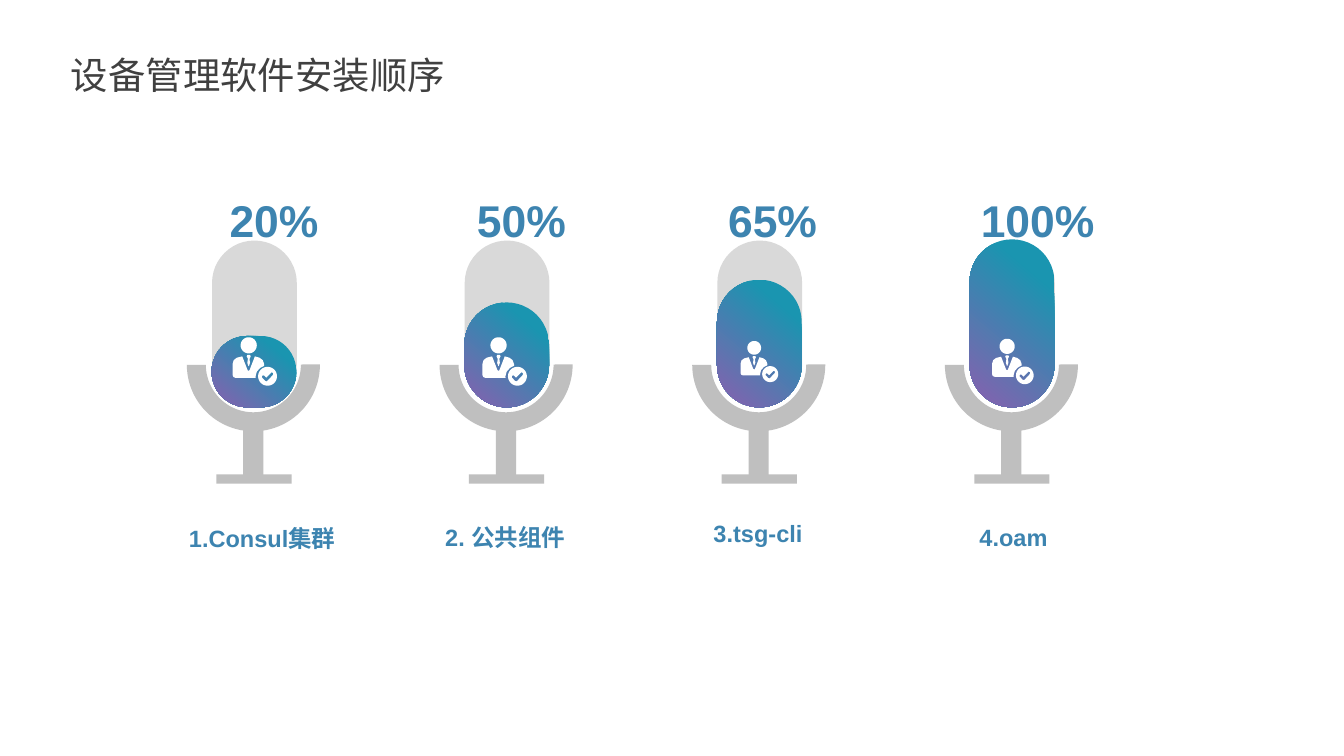
from dataclasses import dataclass
from math import cos, pi, sin

from pptx import Presentation
from pptx.dml.color import RGBColor
from pptx.enum.shapes import MSO_SHAPE
from pptx.enum.text import MSO_ANCHOR, MSO_AUTO_SIZE, PP_ALIGN
from pptx.util import Pt

RECTANGLE = MSO_SHAPE.RECTANGLE
ROUNDED = MSO_SHAPE.ROUNDED_RECTANGLE
ARC = MSO_SHAPE.BLOCK_ARC
CENTER = PP_ALIGN.CENTER
LEFT = PP_ALIGN.LEFT
MIDDLE = MSO_ANCHOR.MIDDLE
TOP = MSO_ANCHOR.TOP
NO_AUTOFIT = MSO_AUTO_SIZE.NONE


@dataclass(frozen=True)
class Theme:
    """Colours, font and type sizes of the slide."""
    title: RGBColor = RGBColor.from_string("404040")
    accent: RGBColor = RGBColor.from_string("3D84B0")
    stand: RGBColor = RGBColor.from_string("BFBFBF")
    capsule: RGBColor = RGBColor.from_string("D9D9D9")
    level_start: RGBColor = RGBColor.from_string("1A95B0")
    level_end: RGBColor = RGBColor.from_string("895FAF")
    icon: RGBColor = RGBColor.from_string("FFFFFF")
    font: str = "Arial"
    title_size: float = 20
    percent_size: float = 23.8
    label_size: float = 12.6


@dataclass(frozen=True)
class Step:
    """One installation step; offsets are relative to its microphone."""
    label: str
    percent: str
    level_height: float
    icon_center: float
    icon_width: float
    percent_offset: float
    label_offset: float
    label_drop: float


THEME = Theme()
STEPS = [
    Step("1.Consul集群", "20%", 38.2, 36.4, 23.8, 15.8, -22.3, 151.9),
    Step("2. 公共组件", "50%", 56.2, 34.9, 23.8, 13, -27.4, 151.2),
    Step("3.tsg-cli", "65%", 68.4, 36, 20.2, 12.2, -27.4, 149),
    Step("4.oam", "100%", 90, 36.4, 22.3, 12.2, -25.9, 151.2),
]
FIRST_LEFT, MICROPHONE_TOP, PITCH = 100.1, 128.9, 135.36
CAPSULE_HEIGHT = 89.3
ICON_WIDTH, ICON_HEIGHT, ICON_PRECISION = 33, 36, 100


def circle(x, y, radius, count=48):
    """Return the points of a circle."""
    return [(x + radius * cos(2 * pi * i / count), y + radius * sin(2 * pi * i / count))
            for i in range(count)]


ICON_OUTLINES = [
    [(29, 26), (25, 30), (23.6, 28.6), (22.6, 28.2), (21.8, 29), (22, 30),
     (24.3, 32.5), (25.3, 32.8), (26, 32.3), (30, 28), (30.2, 26.6)],
    circle(26, 29, 7),
    [(7.2, 14.2), (11.2, 24.5), (12, 25), (12.6, 24.5), (16.6, 14.2), (20, 15.2),
     (22.4, 17), (23.5, 20), (23.5, 21.2), (20.4, 22.8), (18, 25.6), (17.1, 29),
     (17.2, 30.2), (2.2, 30.2), (0.6, 29.5), (0, 28), (0, 20), (0.9, 17), (3.2, 15.2)],
    [(11, 13.2), (13, 13.2), (13.5, 14.2), (12.6, 16), (13, 19), (12.2, 21.4),
     (11.8, 21.4), (11, 19), (11.4, 16), (10.5, 14.2)],
    circle(12, 6, 6),
]


def set_text(shape, text, size, color, bold, alignment, anchor, insets):
    """Write one unwrapped line of text with the given format."""
    frame = shape.text_frame
    frame.auto_size = NO_AUTOFIT
    frame.word_wrap = False
    frame.vertical_anchor = anchor
    frame.margin_left = frame.margin_right = Pt(insets[0])
    frame.margin_top = frame.margin_bottom = Pt(insets[1])
    frame.text = text
    paragraph = frame.paragraphs[0]
    paragraph.alignment = alignment
    font = paragraph.font
    font.name, font.size, font.bold = THEME.font, Pt(size), bold
    font.color.rgb = color


def add_part(slide, kind, left, top, width, height, color):
    """Add a filled preset shape without line or shadow."""
    shape = slide.shapes.add_shape(kind, Pt(left), Pt(top), Pt(width), Pt(height))
    shape.shadow.inherit = False
    shape.line.fill.background()
    shape.fill.solid()
    shape.fill.fore_color.rgb = color
    return shape


def add_title(slide, text, left, top, width, height):
    """Place the slide title in its box."""
    title = slide.shapes.title
    title.left, title.top, title.width, title.height = map(Pt, (left, top, width, height))
    set_text(title, text, THEME.title_size, THEME.title, False, CENTER, MIDDLE, (0, 0))


def add_icon(slide, center_x, center_y, width):
    """Draw the person with a check badge around a centre point."""
    scale = Pt(width) / (ICON_WIDTH * ICON_PRECISION)
    outlines = [[(x * ICON_PRECISION, y * ICON_PRECISION) for x, y in outline]
                for outline in ICON_OUTLINES]
    builder = slide.shapes.build_freeform(*outlines[0][0], scale=scale)
    builder.add_line_segments(outlines[0][1:], close=True)
    for outline in outlines[1:]:
        builder.move_to(*outline[0])
        builder.add_line_segments(outline[1:], close=True)
    height = width * ICON_HEIGHT / ICON_WIDTH
    icon = builder.convert_to_shape(Pt(center_x - width / 2), Pt(center_y - height / 2))
    icon.shadow.inherit = False
    icon.line.fill.background()
    icon.fill.solid()
    icon.fill.fore_color.rgb = THEME.icon


def add_microphone(slide, step, left, top):
    """Draw a microphone filled to the level of its step."""
    cradle = add_part(slide, ARC, left, top + 30.9, 71.3, 71.3, THEME.stand)
    for index, value in enumerate((108, 0.191, 0.143)):
        cradle.adjustments[index] = value
    cradle._element.spPr.xfrm.set("flipV", "1")
    add_part(slide, RECTANGLE, left + 30.2, top + 100.8, 10.8, 25.2, THEME.stand)
    add_part(slide, RECTANGLE, left + 15.8, top + 125.3, 40.3, 5, THEME.stand)
    capsule = add_part(slide, ROUNDED, left + 13.5, top, 45.4, CAPSULE_HEIGHT, THEME.capsule)
    level = add_part(slide, ROUNDED, left + 13.3, top + CAPSULE_HEIGHT - step.level_height,
                     45.4, step.level_height, THEME.level_start)
    capsule.adjustments[0] = level.adjustments[0] = 0.5
    level.fill.gradient()
    level.fill.gradient_angle = 230
    stops = ((0.21, THEME.level_start), (1, THEME.level_end))
    for stop, (position, color) in zip(level.fill.gradient_stops, stops):
        stop.position = position
        stop.color.rgb = color
    add_icon(slide, left + step.icon_center, top + 64.8, step.icon_width)


def add_step(slide, step, left, top):
    """Place a microphone with its percentage above and its label below."""
    add_microphone(slide, step, left, top)
    percent = slide.shapes.add_textbox(
        Pt(left + step.percent_offset), Pt(top - 28.8), Pt(53.3), Pt(31))
    set_text(percent, step.percent, THEME.percent_size, THEME.accent, True,
             LEFT, TOP, (7.2, 3.6))
    label = slide.shapes.add_textbox(
        Pt(left + step.label_offset), Pt(top + step.label_drop), Pt(125.3), Pt(12.2))
    set_text(label, step.label, THEME.label_size, THEME.accent, True,
             CENTER, TOP, (5.8, 0))


def main():
    """Build the installation order slide."""
    presentation = Presentation()
    presentation.slide_width, presentation.slide_height = Pt(720), Pt(405)
    slide = presentation.slides.add_slide(presentation.slide_layouts[5])
    add_title(slide, "设备管理软件安装顺序", 36.7, 23, 203, 33.8)
    for index, step in enumerate(STEPS):
        add_step(slide, step, FIRST_LEFT + index * PITCH, MICROPHONE_TOP)
    presentation.save("out.pptx")


if __name__ == "__main__":
    main()
